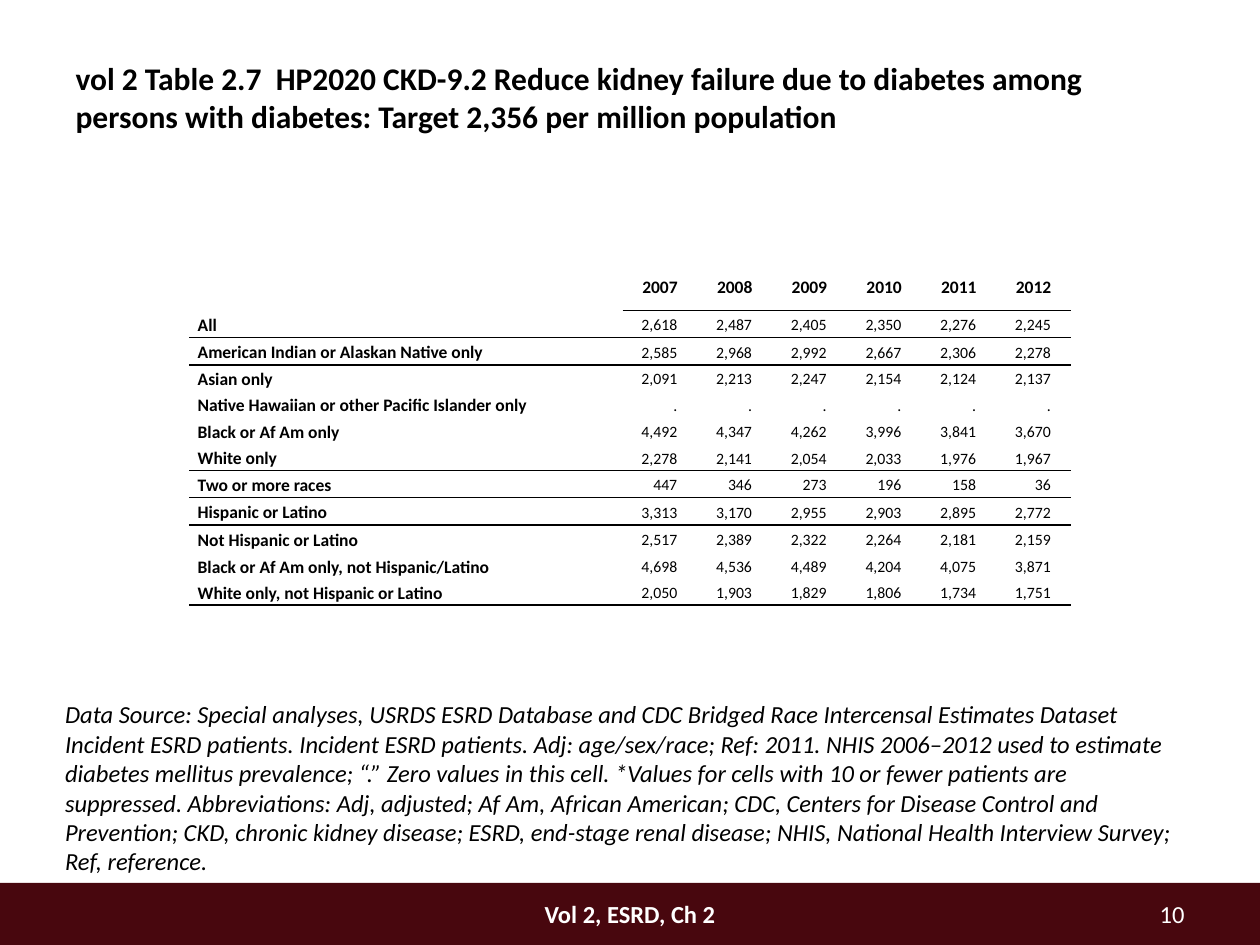
from dataclasses import dataclass

from lxml import etree
from pptx import Presentation
from pptx.dml.color import RGBColor
from pptx.enum.shapes import MSO_SHAPE
from pptx.enum.text import MSO_ANCHOR, MSO_AUTO_SIZE, PP_ALIGN
from pptx.oxml.ns import qn
from pptx.util import Pt

LEFT, CENTER, RIGHT = PP_ALIGN.LEFT, PP_ALIGN.CENTER, PP_ALIGN.RIGHT
TOP, MIDDLE = MSO_ANCHOR.TOP, MSO_ANCHOR.MIDDLE
NO_AUTOFIT = MSO_AUTO_SIZE.NONE
RECTANGLE = MSO_SHAPE.RECTANGLE
NO_TABLE_STYLE = "{2D5ABB26-0587-4C30-8999-92F81FD0307C}"


@dataclass(frozen=True)
class Theme:
    font: str = "Calibri"
    ink: str = "000000"
    paper: str = "FFFFFF"
    band: str = "48070E"
    title: float = 18
    body: float = 14
    label: float = 10
    value: float = 9
    rule: float = 1


@dataclass(frozen=True)
class Box:
    left: float
    top: float
    width: float
    height: float


@dataclass(frozen=True)
class TextStyle:
    size: float
    color: str
    align: PP_ALIGN = LEFT
    bold: bool = False
    italic: bool = False
    spacing: float = 1.0


@dataclass(frozen=True)
class Row:
    label: str
    values: str
    height: float
    ruled: bool = False


THEME = Theme()
HEADING = TextStyle(THEME.title, THEME.ink, bold=True)
NOTE = TextStyle(THEME.body, THEME.ink, italic=True)
FOOTER = TextStyle(THEME.body, THEME.paper, CENTER, bold=True)
PAGE = TextStyle(THEME.body, THEME.paper, RIGHT)
YEAR = TextStyle(THEME.label, THEME.ink, CENTER, bold=True, spacing=1.15)
LABEL = TextStyle(THEME.label, THEME.ink, bold=True, spacing=1.15)
VALUE = TextStyle(THEME.value, THEME.ink, RIGHT, spacing=1.15)

TITLE = ("vol 2 Table 2.7  HP2020 CKD-9.2 Reduce kidney failure due to diabetes "
         "among persons with diabetes: Target 2,356 per million population")
SOURCE_NOTE = (
    "Data Source: Special analyses, USRDS ESRD Database and CDC Bridged Race "
    "Intercensal Estimates Dataset Incident ESRD patients. Incident ESRD patients. "
    "Adj: age/sex/race; Ref: 2011. NHIS 2006–2012 used to estimate diabetes mellitus "
    "prevalence; “.” Zero values in this cell. *Values for cells with 10 or fewer "
    "patients are suppressed. Abbreviations: Adj, adjusted; Af Am, African American; "
    "CDC, Centers for Disease Control and Prevention; CKD, chronic kidney disease; "
    "ESRD, end-stage renal disease; NHIS, National Health Interview Survey; "
    "Ref, reference.")

TALL, SHORT = 15.6, 15.1
ROWS = [
    Row("", "2007 2008 2009 2010 2011 2012", 27.3, ruled=True),
    Row("All", "2,618 2,487 2,405 2,350 2,276 2,245", TALL, ruled=True),
    Row("American Indian or Alaskan Native only",
        "2,585 2,968 2,992 2,667 2,306 2,278", TALL),
    Row("Asian only", "2,091 2,213 2,247 2,154 2,124 2,137", SHORT),
    Row("Native Hawaiian or other Pacific Islander only", ". . . . . .", SHORT),
    Row("Black or Af Am only", "4,492 4,347 4,262 3,996 3,841 3,670", SHORT),
    Row("White only", "2,278 2,141 2,054 2,033 1,976 1,967", SHORT, ruled=True),
    Row("Two or more races", "447 346 273 196 158 36", TALL, ruled=True),
    Row("Hispanic or Latino", "3,313 3,170 2,955 2,903 2,895 2,772", TALL),
    Row("Not Hispanic or Latino", "2,517 2,389 2,322 2,264 2,181 2,159", TALL),
    Row("Black or Af Am only, not Hispanic/Latino",
        "4,698 4,536 4,489 4,204 4,075 3,871", SHORT),
    Row("White only, not Hispanic or Latino",
        "2,050 1,903 1,829 1,806 1,734 1,751", SHORT, ruled=True),
]
LABEL_WIDTH, YEAR_WIDTH = 247.8, 42.7


def write(frame, text: str, style: TextStyle) -> None:
    paragraph = frame.paragraphs[0]
    paragraph.alignment = style.align
    paragraph.line_spacing = style.spacing
    paragraph.space_before = Pt(0)
    if not text:
        paragraph.font.size = Pt(style.size)
        return
    run = paragraph.add_run()
    run.text = text
    font = run.font
    font.name, font.size = THEME.font, Pt(style.size)
    font.bold, font.italic = style.bold, style.italic
    font.color.rgb = RGBColor.from_string(style.color)


def place(shape, box: Box) -> None:
    shape.left, shape.top = Pt(box.left), Pt(box.top)
    shape.width, shape.height = Pt(box.width), Pt(box.height)


def fill_text(shape, box: Box, text: str, style: TextStyle) -> None:
    place(shape, box)
    frame = shape.text_frame
    frame.word_wrap, frame.auto_size = True, NO_AUTOFIT
    frame.vertical_anchor = TOP
    write(frame, text, style)


def remove_bullet(shape) -> None:
    properties = shape.text_frame.paragraphs[0]._p.get_or_add_pPr()
    properties.set("marL", "0")
    properties.set("indent", "0")
    etree.SubElement(properties, qn("a:buNone"))


def add_rule(cell, side: str) -> None:
    line = etree.Element(qn(f"a:{side}"), w=str(Pt(THEME.rule)))
    solid = etree.SubElement(line, qn("a:solidFill"))
    etree.SubElement(solid, qn("a:srgbClr"), val=THEME.ink)
    cell._tc.get_or_add_tcPr().insert(0, line)


def fill_cell(cell, text: str, style: TextStyle, left: float, right: float) -> None:
    cell.fill.background()
    cell.vertical_anchor = MIDDLE
    cell.margin_left, cell.margin_right = Pt(left), Pt(right)
    cell.margin_top = cell.margin_bottom = Pt(0)
    write(cell.text_frame, text, style)


def add_rates_table(slide, left: float, top: float) -> None:
    year_count = len(ROWS[0].values.split())
    width = LABEL_WIDTH + year_count * YEAR_WIDTH
    height = sum(row.height for row in ROWS)
    table = slide.shapes.add_table(len(ROWS), year_count + 1, Pt(left), Pt(top),
                                   Pt(width), Pt(height)).table
    table._tbl.tblPr.find(qn("a:tableStyleId")).text = NO_TABLE_STYLE
    table.first_row = table.horz_banding = False
    for index, column in enumerate(table.columns):
        column.width = Pt(YEAR_WIDTH if index else LABEL_WIDTH)

    for r, row in enumerate(ROWS):
        table.rows[r].height = Pt(row.height)
        for c, text in enumerate([row.label, *row.values.split()]):
            cell = table.cell(r, c)
            if c and r:
                fill_cell(cell, text, VALUE, 0, 11.5)
            else:
                fill_cell(cell, text, YEAR if c else LABEL, 5, 5)
            # The rule under the years leaves out the label column
            if row.ruled and (r or c):
                add_rule(cell, "lnB")
            if r and ROWS[r - 1].ruled and (r > 1 or c):
                add_rule(cell, "lnT")


def main() -> None:
    deck = Presentation()
    deck.slide_width, deck.slide_height = Pt(720), Pt(540)
    slide = deck.slides.add_slide(deck.slide_layouts[1])

    # Title and source note
    heading, source_note = slide.placeholders
    fill_text(heading, Box(36, 30, 624, 78), TITLE, HEADING)
    remove_bullet(source_note)
    fill_text(source_note, Box(30, 396, 654, 96), SOURCE_NOTE, NOTE)

    # Footer band with chapter and page number
    band = slide.shapes.add_shape(RECTANGLE, Pt(0), Pt(504.5), Pt(720), Pt(36))
    band.shadow.inherit = False
    band.fill.solid()
    band.fill.fore_color.rgb = RGBColor.from_string(THEME.band)
    band.line.fill.background()
    for box, text, style in [(Box(612, 510, 72, 22), "10", PAGE),
                             (Box(282, 510, 156, 22), "Vol 2, ESRD, Ch 2", FOOTER)]:
        fill_text(slide.shapes.add_textbox(0, 0, 0, 0), box, text, style)

    # Rates by race and ethnicity
    add_rates_table(slide, 108, 150)
    deck.save("out.pptx")


if __name__ == "__main__":
    main()
